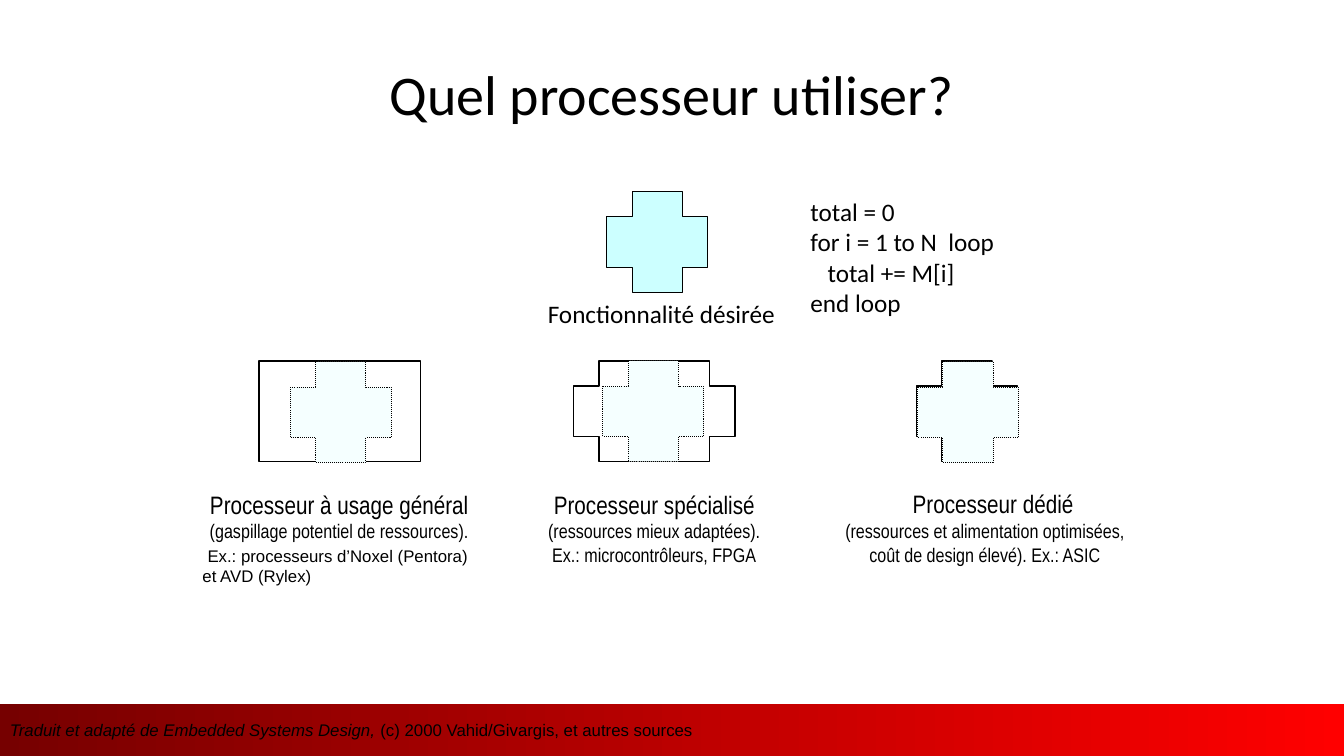
from pptx import Presentation
from pptx.dml.color import RGBColor
from pptx.enum.dml import MSO_LINE
from pptx.enum.shapes import MSO_SHAPE
from pptx.enum.text import MSO_ANCHOR, PP_ALIGN
from pptx.util import Pt

EMU_PER_PX = 9144  # 100 px to the inch
RECTANGLE, PLUS = MSO_SHAPE.RECTANGLE, MSO_SHAPE.CROSS
LEFT, CENTER = PP_ALIGN.LEFT, PP_ALIGN.CENTER
TOP, MIDDLE = MSO_ANCHOR.TOP, MSO_ANCHOR.MIDDLE
DOTTED = MSO_LINE.ROUND_DOT

BLACK, WHITE = "000000", "FFFFFF"
CYAN, PALE_CYAN = "CCFFFF", "F5FFFF"
DARK_RED, RED = "760000", "FF0000"
SANS, NARROW, BODY = "Arial", "Arial Narrow", "Calibri"

CROSS_SIZE = 100
OUTLINE_WIDTH = 160


def px(length):
    return round(length * EMU_PER_PX)


def color(hex_string):
    return RGBColor.from_string(hex_string)


def add_outline(page, kind, box, fill, width=0.75, dash=None):
    shape = page.shapes.add_shape(kind, *map(px, box))
    shape.shadow.inherit = False
    shape.fill.solid()
    shape.fill.fore_color.rgb = color(fill)
    shape.line.color.rgb = color(BLACK)
    shape.line.width = Pt(width)
    if dash:
        shape.line.dash_style = dash
    if kind == PLUS:
        shape.adjustments[0] = 0.25


def set_frame(shape, anchor=TOP, side_inset=10):
    frame = shape.text_frame
    frame.word_wrap = True
    frame.vertical_anchor = anchor
    frame.margin_left = frame.margin_right = px(side_inset)
    frame.margin_top = frame.margin_bottom = px(5)
    return frame


def add_text_box(page, box, **options):
    return set_frame(page.shapes.add_textbox(*map(px, box)), **options)


def write(para, spans, font=BODY, align=CENTER, margin=0, indent=0, before=0):
    """Fill a paragraph with spans of (text, size in points)."""
    para.alignment = align
    para.space_before = Pt(before)
    para.font.name = font
    para.font.color.rgb = color(BLACK)
    sizes = {size for _, size in spans}
    if len(sizes) == 1:
        para.font.size = Pt(sizes.pop())
    for text, size in spans:
        span = para.add_run()
        span.text = text
        if para.font.size is None:
            span.font.size = Pt(size)
    if margin or indent:
        properties = para._p.get_or_add_pPr()
        properties.set("marL", str(px(margin)))
        properties.set("indent", str(px(indent)))


def add_footer(page, box):
    band = page.shapes.add_shape(RECTANGLE, *map(px, box))
    band.shadow.inherit = False
    band.line.fill.background()
    band.fill.gradient()
    band.fill.gradient_angle = 0
    for stop, shade in zip(band.fill.gradient_stops, (DARK_RED, RED)):
        stop.color.rgb = color(shade)
    para = set_frame(band, anchor=MIDDLE).paragraphs[0]
    write(para, [("Traduit et adapté de Embedded Systems Design,", 12),
                 (" (c) 2000 Vahid/Givargis, et autres sources", 12)],
          font=SANS, align=LEFT)
    para.runs[0].font.italic = True


def add_title(page, box):
    frame = add_text_box(page, box, anchor=MIDDLE)
    write(frame.paragraphs[0], [("Quel processeur utiliser?", 40)])


def add_desired_function(page, box):
    left, top, width, height = box
    add_outline(page, PLUS, (left + 68, top, CROSS_SIZE, CROSS_SIZE), CYAN)
    caption = add_text_box(page, (left, top + 101, 244, 48), side_inset=0)
    write(caption.paragraphs[0], [("Fonctionnalité désirée", 18)])
    code = add_text_box(page, (left + 260, top, width - 260, height))
    lines = [("total = 0", 0), ("for i = 1 to N  loop", 0),
             ("total += M[i]", 17), ("end loop", 0)]
    for index, (text, margin) in enumerate(lines):
        para = code.add_paragraph() if index else code.paragraphs[0]
        write(para, [(text, 18)], align=LEFT, margin=margin)


def add_processor(page, box, outline, outline_width, cross_offset, text_box, paragraphs):
    """Draw the outline of a processor, the function inside it and the text below."""
    left, top = box
    add_outline(page, outline, (left, top, outline_width, CROSS_SIZE), WHITE, width=1)
    across, down = cross_offset
    add_outline(page, PLUS, (left + across, top + down, CROSS_SIZE, CROSS_SIZE),
                PALE_CYAN, dash=DOTTED)
    text_left, text_width, text_height = text_box
    frame = add_text_box(page, (text_left, top + 122, text_width, text_height))
    for index, options in enumerate(paragraphs):
        para = frame.add_paragraph() if index else frame.paragraphs[0]
        write(para, **{"font": NARROW, **options})


PROCESSORS = [
    ((257, 358), RECTANGLE, OUTLINE_WIDTH, (31, 1), (191, 291, 108), [
        {"spans": [("Processeur à usage général ", 18),
                   ("(gaspillage potentiel de ressources).", 14)]},
        {"spans": [("Ex.: processeurs d’Noxel (Pentora) et AVD (Rylex)", 12)],
         "font": SANS, "align": LEFT, "indent": 5, "before": 2}]),
    ((569, 358), PLUS, OUTLINE_WIDTH, (29, 0), (519, 260, 91), [
        {"spans": [("Processeur spécialisé ", 18),
                   ("(ressources mieux adaptées). Ex.: microcontrôleurs, FPGA", 14)]}]),
    ((909, 358), PLUS, CROSS_SIZE, (1, 1), (812, 330, 84), [
        {"spans": [("Processeur dédié", 18)], "margin": 16},
        {"spans": [("(ressources et alimentation optimisées, "
                    "coût de design élevé). Ex.: ASIC", 14)]}]),
]


def main():
    deck = Presentation()
    deck.slide_width, deck.slide_height = px(1333), px(750)
    page = deck.slides.add_slide(deck.slide_layouts[6])
    add_footer(page, (0, 698, 1333, 52))
    add_title(page, (115, 30, 1102, 125))
    add_desired_function(page, (534, 190, 505, 170))
    for processor in PROCESSORS:
        add_processor(page, *processor)
    deck.save("out.pptx")


if __name__ == "__main__":
    main()
